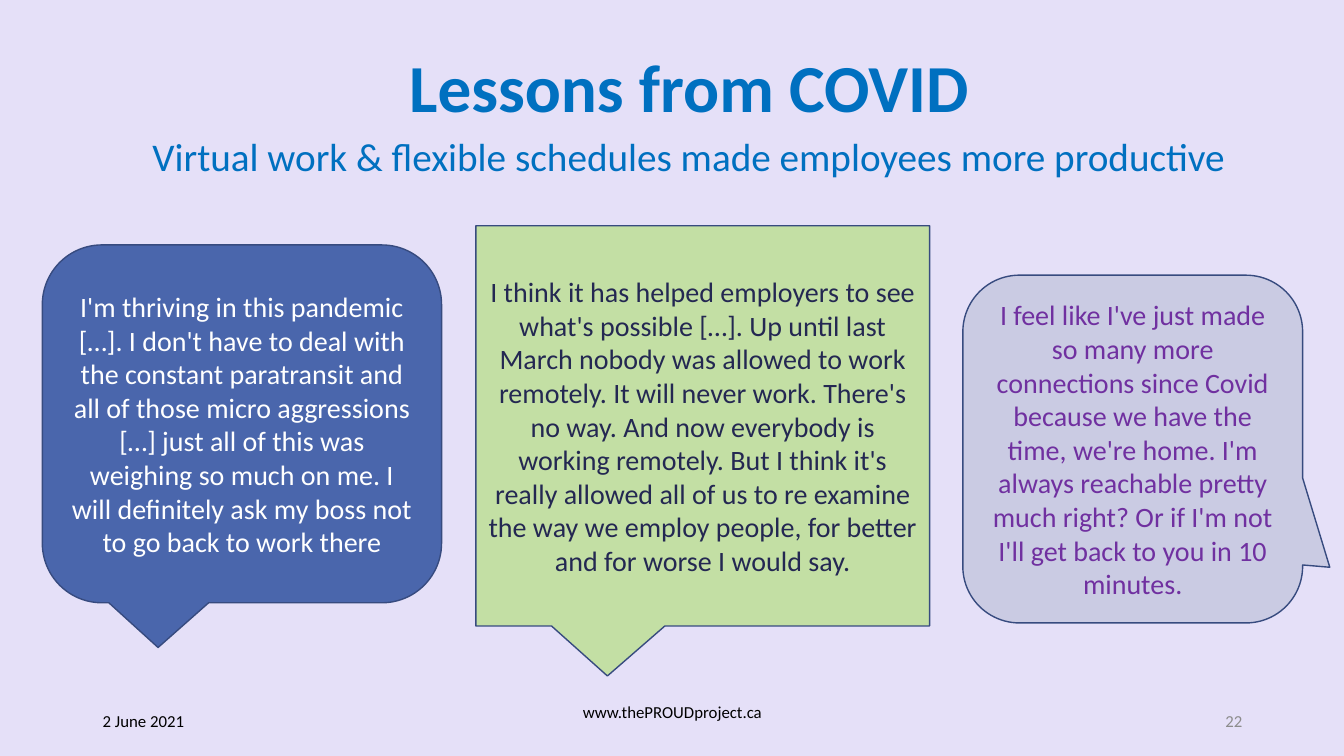
from lxml.etree import SubElement
from pptx import Presentation
from pptx.dml.color import RGBColor
from pptx.enum.shapes import MSO_SHAPE
from pptx.enum.text import MSO_ANCHOR, PP_ALIGN
from pptx.oxml.ns import qn
from pptx.util import Pt

PX = 9144  # 100 px to the inch
THEME = {
    "font": "Calibri",
    "page": "E5E0F8", "head": "0070C0", "edge": "374B7F",
    "blue": "4A66AC", "green": "91DE26", "grey": "7F8FA9",
    "white": "FFFFFF", "navy": "242852", "purple": "7030A0",
    "black": "000000", "dim": "8C8C8C",
    "title": 48, "lead": 28, "quote": 20, "foot": 12,
}


def paint(fill, color, alpha=100):
    fill.solid()
    fill.fore_color.rgb = RGBColor.from_string(THEME[color])
    if alpha < 100:
        tint = fill._xPr.find(qn("a:solidFill"))[0]
        SubElement(tint, qn("a:alpha"), val=str(alpha * 1000))


def write(shape, text, size, color, align=PP_ALIGN.CENTER,
          anchor=MSO_ANCHOR.MIDDLE, bold=False, space=1.0):
    frame = shape.text_frame
    frame.word_wrap = True
    frame.vertical_anchor = anchor
    para = frame.paragraphs[0]
    para.text = text
    para.alignment = align
    para.line_spacing = space
    font = para.font
    font.name, font.size, font.bold = THEME["font"], Pt(THEME[size]), bold
    font.color.rgb = RGBColor.from_string(THEME[color])


deck = Presentation()
deck.slide_width, deck.slide_height = 1333 * PX, 750 * PX
slide = deck.slides.add_slide(deck.slide_layouts[6])
paint(slide.background.fill, "page")
shapes = slide.shapes

# Title and subtitle
title = shapes.add_textbox(131 * PX, 42 * PX, 1105 * PX, 97 * PX)
write(title, "Lessons from COVID", "title", "head", bold=True, space=0.9)
lead = shapes.add_textbox(139 * PX, 132 * PX, 1088 * PX, 59 * PX)
write(lead, "Virtual work & flexible schedules made employees more productive",
      "lead", "head", anchor=MSO_ANCHOR.TOP, space=0.9)

# Quotes in speech bubbles: kind, box, tip offset, fill, alpha, ink, text
ROUND = MSO_SHAPE.ROUNDED_RECTANGULAR_CALLOUT
SQUARE = MSO_SHAPE.RECTANGULAR_CALLOUT
quotes = [
    (ROUND, (42, 243, 396, 355), (-0.21, 0.625), "blue", 100, "white",
     "I'm thriving in this pandemic […]. I don't have to deal with the "
     "constant paratransit and all of those micro aggressions […] just all "
     "of this was weighing so much on me. I will definitely ask my boss not "
     "to go back to work there"),
    (SQUARE, (472, 224, 450, 397), (-0.21, 0.625), "green", 40, "navy",
     "I think it has helped employers to see what's possible […]. Up until "
     "last March nobody was allowed to work remotely. It will never work. "
     "There's no way. And now everybody is working remotely. But I think "
     "it's really allowed all of us to re examine the way we employ people, "
     "for better and for worse I would say."),
    (ROUND, (955, 273, 337, 345), (0.58, 0.34), "grey", 26, "purple",
     "I feel like I've just made so many more connections since Covid "
     "because we have the time, we're home. I'm always reachable pretty "
     "much right? Or if I'm not I'll get back to you in 10 minutes."),
]
for kind, box, tip, fill, alpha, ink, text in quotes:
    bubble = shapes.add_shape(kind, *[n * PX for n in box])
    bubble.shadow.inherit = False
    bubble.adjustments[0], bubble.adjustments[1] = tip
    paint(bubble.fill, fill, alpha)
    paint(bubble.line.fill, "edge")
    bubble.line.width = Pt(1)
    write(bubble, text, "quote", ink)

# Footer: date, site, page number
for left, top, width, align, ink, text in [
    (92, 695, 300, PP_ALIGN.LEFT, "black", "2 June 2021"),
    (442, 686, 450, PP_ALIGN.CENTER, "black", "www.thePROUDproject.ca"),
    (942, 695, 300, PP_ALIGN.RIGHT, "dim", "22"),
]:
    note = shapes.add_textbox(left * PX, top * PX, width * PX, 40 * PX)
    write(note, text, "foot", ink, align)

deck.save("out.pptx")
